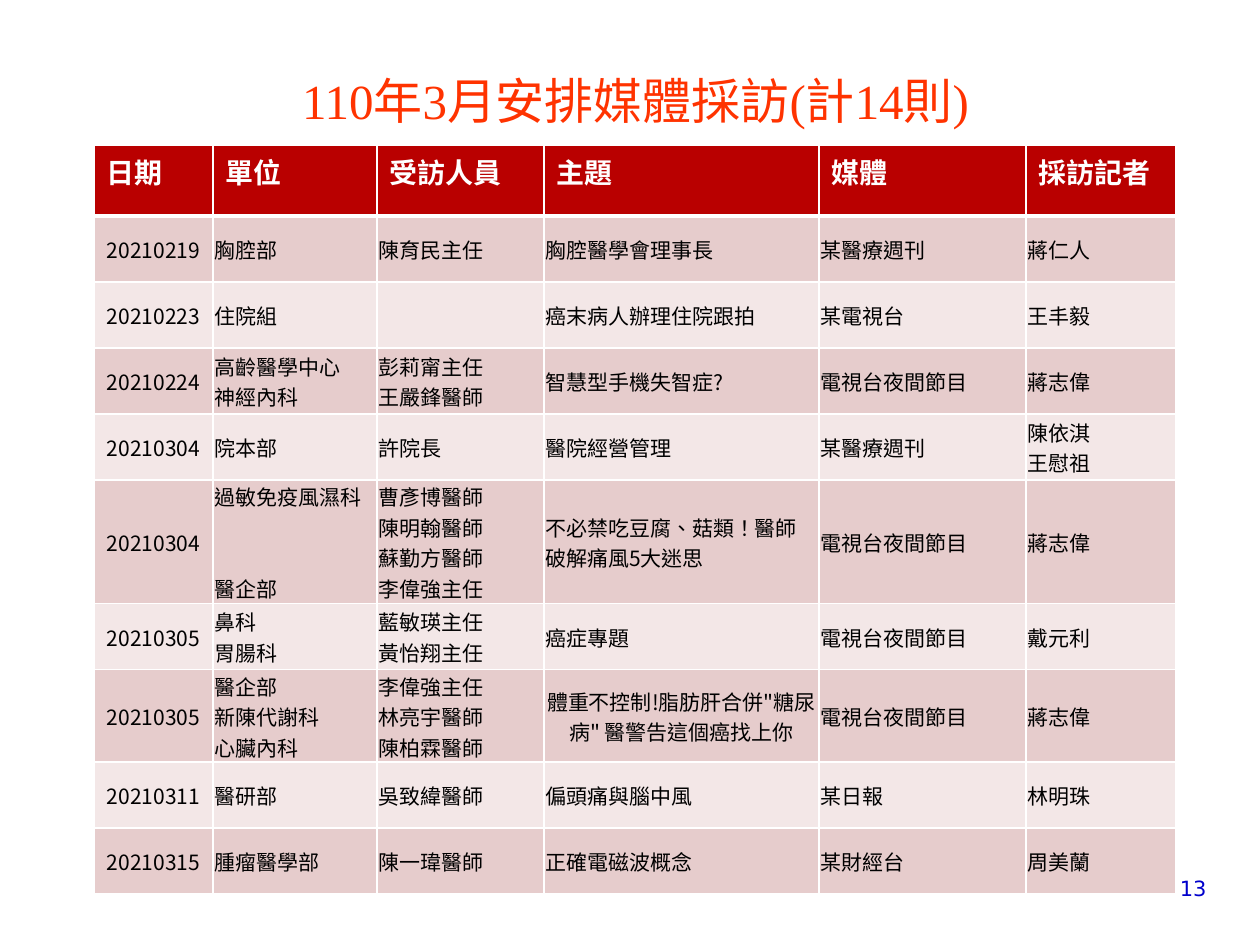
from dataclasses import dataclass

from lxml import etree
from pptx import Presentation
from pptx.dml.color import RGBColor
from pptx.enum.text import MSO_ANCHOR, MSO_AUTO_SIZE, PP_ALIGN
from pptx.oxml.ns import qn
from pptx.util import Emu, Pt

LEFT, CENTER, RIGHT, JUSTIFY = PP_ALIGN.LEFT, PP_ALIGN.CENTER, PP_ALIGN.RIGHT, PP_ALIGN.JUSTIFY
TOP, MIDDLE, BOTTOM = MSO_ANCHOR.TOP, MSO_ANCHOR.MIDDLE, MSO_ANCHOR.BOTTOM
NO_FIT = MSO_AUTO_SIZE.NONE
TITLE_ONLY = 5
PX_PER_INCH = 126

COLORS = {
    "title": "FF3300",
    "number": "0000CC",
    "header": "B90000",
    "dark": "E6CCCC",
    "light": "F3E7E7",
    "white": "FFFFFF",
    "black": "000000",
}
FRAME = {"word_wrap": True, "auto_size": NO_FIT}
BODY_CELL = {
    "vertical_anchor": MIDDLE,
    "margin_left": Pt(0.75),
    "margin_right": Pt(0.75),
    "margin_top": Pt(0.75),
    "margin_bottom": 0,
}


@dataclass(frozen=True)
class Style:
    size: int
    font: str
    color: str
    bold: bool = False
    asian: str = "Noto Sans CJK TC"


@dataclass(frozen=True)
class Interview:
    date: str
    unit: str
    people: str
    topic: str
    media: str
    reporter: str
    unit_gap: int = 0
    topic_align: PP_ALIGN = LEFT


TITLE = Style(28, "Times New Roman", "title")
NUMBER = Style(12, "DejaVu Sans", "number")
HEADER = Style(16, "Noto Sans CJK SC", "white", True, "Noto Sans CJK SC")
BODY = Style(12, "Noto Sans CJK TC", "black")

TV_SHOW = "電視台夜間節目"
WEEKLY = "某醫療週刊"
HEADINGS = ["日期", "單位", "受訪人員", "主題", "媒體", "採訪記者"]
COL_WIDTHS = [119, 164, 167, 275, 207, 150]
HEADER_HEIGHT, ROW_HEIGHT = 71, 66
INTERVIEWS = [
    Interview("20210219", "胸腔部", "陳育民主任", "胸腔醫學會理事長", WEEKLY, "蔣仁人"),
    Interview("20210223", "住院組", "", "癌末病人辦理住院跟拍", "某電視台", "王丰毅"),
    Interview("20210224", "高齡醫學中心\n神經內科", "彭莉甯主任\n王嚴鋒醫師",
              "智慧型手機失智症?", TV_SHOW, "蔣志偉"),
    Interview("20210304", "院本部", "許院長", "醫院經營管理", WEEKLY, "陳依淇\n王慰祖"),
    Interview("20210304", "過敏免疫風濕科\n醫企部",
              "曹彥博醫師\n陳明翰醫師\n蘇勤方醫師\n李偉強主任",
              "不必禁吃豆腐、菇類！醫師破解痛風5大迷思", TV_SHOW, "蔣志偉", unit_gap=35),
    Interview("20210305", "鼻科\n胃腸科", "藍敏瑛主任\n黃怡翔主任", "癌症專題", TV_SHOW, "戴元利"),
    Interview("20210305", "醫企部\n新陳代謝科\n心臟內科", "李偉強主任\n林亮宇醫師\n陳柏霖醫師",
              "體重不控制!脂肪肝合併\"糖尿病\" 醫警告這個癌找上你", TV_SHOW, "蔣志偉",
              topic_align=CENTER),
    Interview("20210311", "醫研部", "吳致緯醫師", "偏頭痛與腦中風", "某日報", "林明珠"),
    Interview("20210315", "腫瘤醫學部", "陳一瑋醫師", "正確電磁波概念", "某財經台", "周美蘭"),
]


def px(n: int) -> Emu:
    return Emu(round(n * 914400 / PX_PER_INCH))


def box(*lengths: int) -> list[Emu]:
    return [px(n) for n in lengths]


def set_attrs(obj, values: dict) -> None:
    for name, value in values.items():
        setattr(obj, name, value)


def write(tf, text: str, style: Style, align: PP_ALIGN, gap: int = 0) -> None:
    for i, line in enumerate(text.split("\n")):
        p = tf.add_paragraph() if i else tf.paragraphs[0]
        p.alignment = align
        if i and gap:
            p.space_before = Pt(gap)
        r = p.add_run()
        r.text = line
        set_attrs(r.font, {"size": Pt(style.size), "name": style.font, "bold": style.bold})
        r.font.color.rgb = RGBColor.from_string(COLORS[style.color])
        r_pr = r._r.get_or_add_rPr()
        r_pr.set("lang", "zh-TW")
        r_pr.find(qn("a:latin")).addnext(etree.Element(qn("a:ea"), typeface=style.asian))


def add_borders(cell, bottom: int) -> None:
    tc_pr = cell._tc.get_or_add_tcPr()
    for side, width in {"L": 1, "R": 1, "T": 1, "B": bottom}.items():
        ln = etree.SubElement(tc_pr, qn(f"a:ln{side}"), w=str(Pt(width)))
        fill = etree.SubElement(ln, qn("a:solidFill"))
        etree.SubElement(fill, qn("a:srgbClr"), val=COLORS["white"])


def paint_cell(cell, color: str, bottom: int = 1) -> None:
    add_borders(cell, bottom)
    cell.fill.solid()
    cell.fill.fore_color.rgb = RGBColor.from_string(COLORS[color])


def fill_row(table, row: int, item: Interview) -> None:
    columns = [
        (item.date, CENTER, 0),
        (item.unit, LEFT, item.unit_gap),
        (item.people, LEFT, 0),
        (item.topic, item.topic_align, 0),
        (item.media, LEFT, 0),
        (item.reporter, LEFT, 0),
    ]
    for col, (text, align, gap) in enumerate(columns):
        cell = table.cell(row, col)
        paint_cell(cell, "dark" if row % 2 else "light")
        set_attrs(cell, BODY_CELL)
        if text:
            write(cell.text_frame, text, BODY, align, gap)


def add_interviews(slide) -> None:
    height = HEADER_HEIGHT + ROW_HEIGHT * len(INTERVIEWS)
    frame = box(94, 145, sum(COL_WIDTHS), height)
    table = slide.shapes.add_table(len(INTERVIEWS) + 1, len(HEADINGS), *frame).table
    for column, width in zip(table.columns, COL_WIDTHS):
        column.width = px(width)
    for i, row in enumerate(table.rows):
        row.height = px(ROW_HEIGHT if i else HEADER_HEIGHT)
    for col, heading in enumerate(HEADINGS):
        cell = table.cell(0, col)
        paint_cell(cell, "header", 3)
        cell.vertical_anchor = TOP
        write(cell.text_frame, heading, HEADER, JUSTIFY)
    for i, item in enumerate(INTERVIEWS, 1):
        fill_row(table, i, item)


def main() -> None:
    prs = Presentation()
    set_attrs(prs, {"slide_width": px(1260), "slide_height": px(945)})
    slide = prs.slides.add_slide(prs.slide_layouts[TITLE_ONLY])

    title = slide.shapes.title
    set_attrs(title, dict(zip(("left", "top", "width", "height"), box(84, 96, 1103, 40))))
    set_attrs(title.text_frame, {**FRAME, "vertical_anchor": BOTTOM})
    write(title.text_frame, "110年3月安排媒體採訪(計14則)", TITLE, CENTER)

    number = slide.shapes.add_textbox(*box(1126, 869, 93, 38))
    set_attrs(number.text_frame, FRAME)
    write(number.text_frame, "13", NUMBER, RIGHT)

    add_interviews(slide)
    prs.save("out.pptx")


if __name__ == "__main__":
    main()
